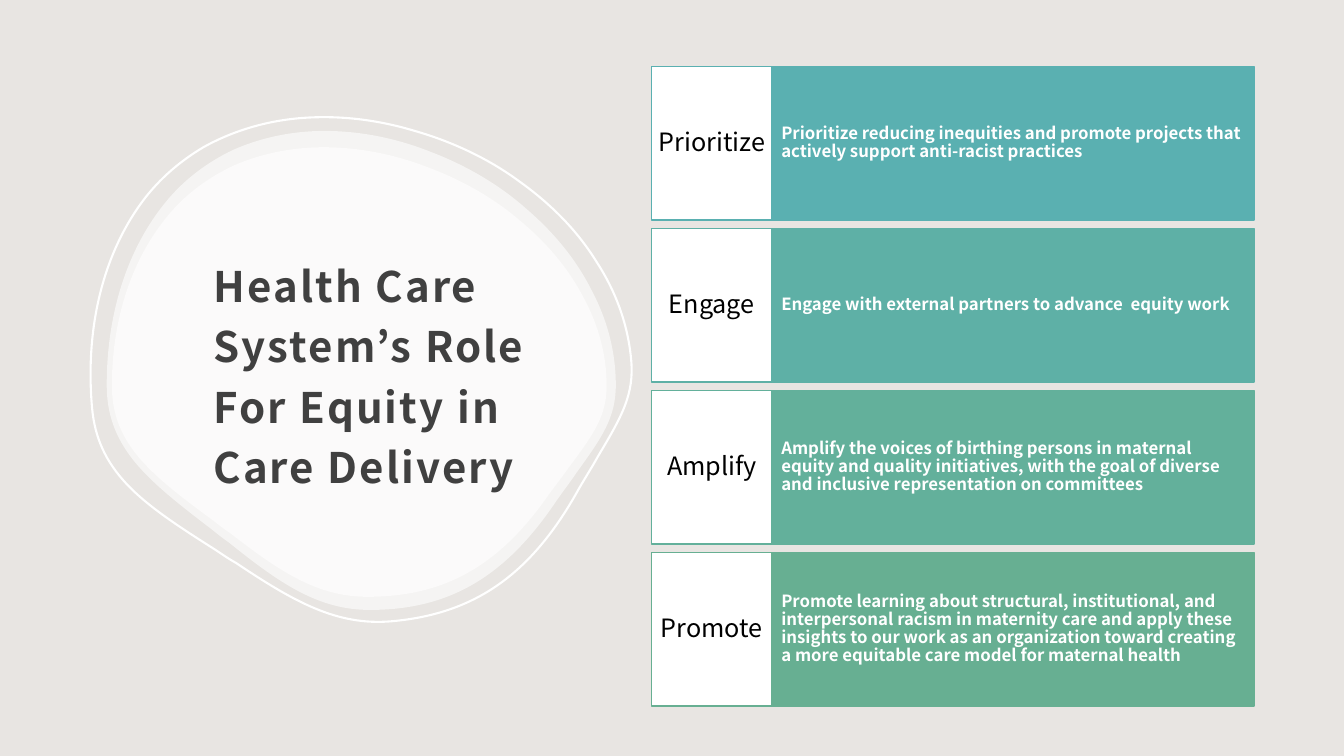
import pptx
import pptx.util
import pptx.dml.color
import pptx.enum.shapes
import pptx.enum.text
import pptx.oxml.ns
import pptx.oxml.xmlchemy
from pptx.util import Cm

FONT = "Noto Sans CJK JP"
COLORS = {
    "background": "E8E5E2",
    "white": "FFFFFF",
    "title": "404040",
    "label": "000000",
}
ROWS = [
    ("Prioritize", "5AB0B1",
     "Prioritize reducing inequities and promote projects that actively support "
     "anti-racist practices"),
    ("Engage", "5EB0A6",
     "Engage with external partners to advance  equity work"),
    ("Amplify", "63B09B",
     "Amplify the voices of birthing persons in maternal equity and quality "
     "initiatives, with the goal of diverse and inclusive representation on committees"),
    ("Promote", "67AF92",
     "Promote learning about structural, institutional, and interpersonal racism in "
     "maternity care and apply these insights to our work as an organization toward "
     "creating a more equitable care model for maternal health"),
]
ROW_TOP, ROW_PITCH, ROW_HEIGHT = 1.68, 4.08, 3.87
LABEL_LEFT, LABEL_WIDTH = 16.42, 3.04
BODY_LEFT, BODY_WIDTH = 19.46, 12.14

BLOB_START = (216, 0)
BLOB_CURVES = [
    ((183, 0), (152, 7), (125, 19)),
    ((100, 31), (77, 48), (59, 70)),
    ((21, 116), (0, 180), (0, 252)),
    ((0, 280), (8, 303), (26, 326)),
    ((45, 350), (74, 372), (104, 395)),
    ((109, 399), (115, 404), (121, 408)),
    ((172, 449), (210, 475), (261, 475)),
    ((339, 475), (395, 443), (446, 367)),
    ((453, 357), (460, 348), (466, 339)),
    ((492, 303), (505, 284), (505, 252)),
    ((505, 220), (497, 188), (481, 158)),
    ((466, 128), (444, 101), (416, 77)),
    ((389, 53), (356, 34), (322, 21)),
    ((287, 7), (251, 0), (216, 0)),
]


def rgb(hex_color):
    return pptx.dml.color.RGBColor.from_string(hex_color)


def fill_solid(fill, hex_color):
    fill.solid()
    fill.fore_color.rgb = rgb(hex_color)


def set_line(sp, hex_color, width):
    sp.line.color.rgb = rgb(hex_color)
    sp.line.width = pptx.util.Pt(width)


def curve_outline(sp):
    qn = pptx.oxml.ns.qn
    outline = sp._element.find(".//" + qn("a:path"))
    segments = outline.findall(qn("a:lnTo"))
    for i in range(0, len(segments), 3):
        curve = pptx.oxml.xmlchemy.OxmlElement("a:cubicBezTo")
        segments[i].addprevious(curve)
        for segment in segments[i:i + 3]:
            curve.append(segment[0])
            outline.remove(segment)


def add_blob(s, left, top, width, height):
    builder = s.shapes.build_freeform(*BLOB_START, scale=Cm(0.0254))
    builder.add_line_segments([pt for curve in BLOB_CURVES for pt in curve], close=True)
    sp = builder.convert_to_shape()
    curve_outline(sp)
    sp.left, sp.top, sp.width, sp.height = Cm(left), Cm(top), Cm(width), Cm(height)
    sp.shadow.inherit = False
    return sp


def add_filled_blob(s, *box):
    sp = add_blob(s, *box)
    fill_solid(sp.fill, COLORS["white"])
    alpha = pptx.oxml.xmlchemy.OxmlElement("a:alpha")
    alpha.set("val", "60000")
    sp._element.find(".//" + pptx.oxml.ns.qn("a:srgbClr")).append(alpha)
    sp.line.fill.background()


def add_outlined_blob(s, *box):
    sp = add_blob(s, *box)
    sp.fill.background()
    set_line(sp, COLORS["white"], 1.5)
    sp.rotation = 355


def set_text(sp, text, size, color, bold, align, spacing, margins):
    tf = sp.text_frame
    tf.text = text
    tf.word_wrap = True
    tf.auto_size = pptx.enum.text.MSO_AUTO_SIZE.NONE
    tf.vertical_anchor = pptx.enum.text.MSO_ANCHOR.MIDDLE
    tf.margin_left = tf.margin_right = Cm(margins[0])
    tf.margin_top = tf.margin_bottom = Cm(margins[1])
    p = tf.paragraphs[0]
    p.alignment = align
    p.line_spacing = spacing
    p.font.name = FONT
    p.font.size = pptx.util.Pt(size)
    p.font.bold = bold
    p.font.color.rgb = rgb(color)
    return p


def add_title(s, text):
    sp = s.shapes.title
    sp.left, sp.top, sp.width, sp.height = Cm(5.08), Cm(5.28), Cm(9.19), Cm(8.15)
    p = set_text(sp, text, 30, COLORS["title"], True,
                 pptx.enum.text.PP_ALIGN.LEFT, 1.2, (0.3, 0.28))
    p.runs[0].font._element.set("spc", "150")
    s.shapes._spTree.append(sp._element)


def add_box(s, left, top, width, fill, line):
    sp = s.shapes.add_shape(pptx.enum.shapes.MSO_SHAPE.RECTANGLE,
                            Cm(left), Cm(top), Cm(width), Cm(ROW_HEIGHT))
    sp.shadow.inherit = False
    fill_solid(sp.fill, fill)
    set_line(sp, line, 1)
    return sp


def add_row(s, top, label, color, body):
    align = pptx.enum.text.PP_ALIGN
    sp = add_box(s, BODY_LEFT, top, BODY_WIDTH, color, color)
    set_text(sp, body, 12, COLORS["white"], True, align.LEFT, 0.9, (0.23, 0.99))
    sp = add_box(s, LABEL_LEFT, top, LABEL_WIDTH, COLORS["white"], color)
    set_text(sp, label, 18, COLORS["label"], False, align.CENTER, 0.9, (0.15, 0.38))


def main():
    prs = pptx.Presentation()
    prs.slide_width, prs.slide_height = Cm(33.87), Cm(19.05)
    s = prs.slides.add_slide(prs.slide_layouts[5])
    fill_solid(s.background.fill, COLORS["background"])
    add_filled_blob(s, 2.69, 3.3, 12.83, 12.07)
    add_filled_blob(s, 2.82, 3.71, 12.47, 11.33)
    add_outlined_blob(s, 2.26, 2.87, 13.64, 12.83)
    add_title(s, "Health Care System’s Role For Equity in Care Delivery")
    for i, row in enumerate(ROWS):
        add_row(s, ROW_TOP + i * ROW_PITCH, *row)
    prs.save("out.pptx")


if __name__ == "__main__":
    main()
